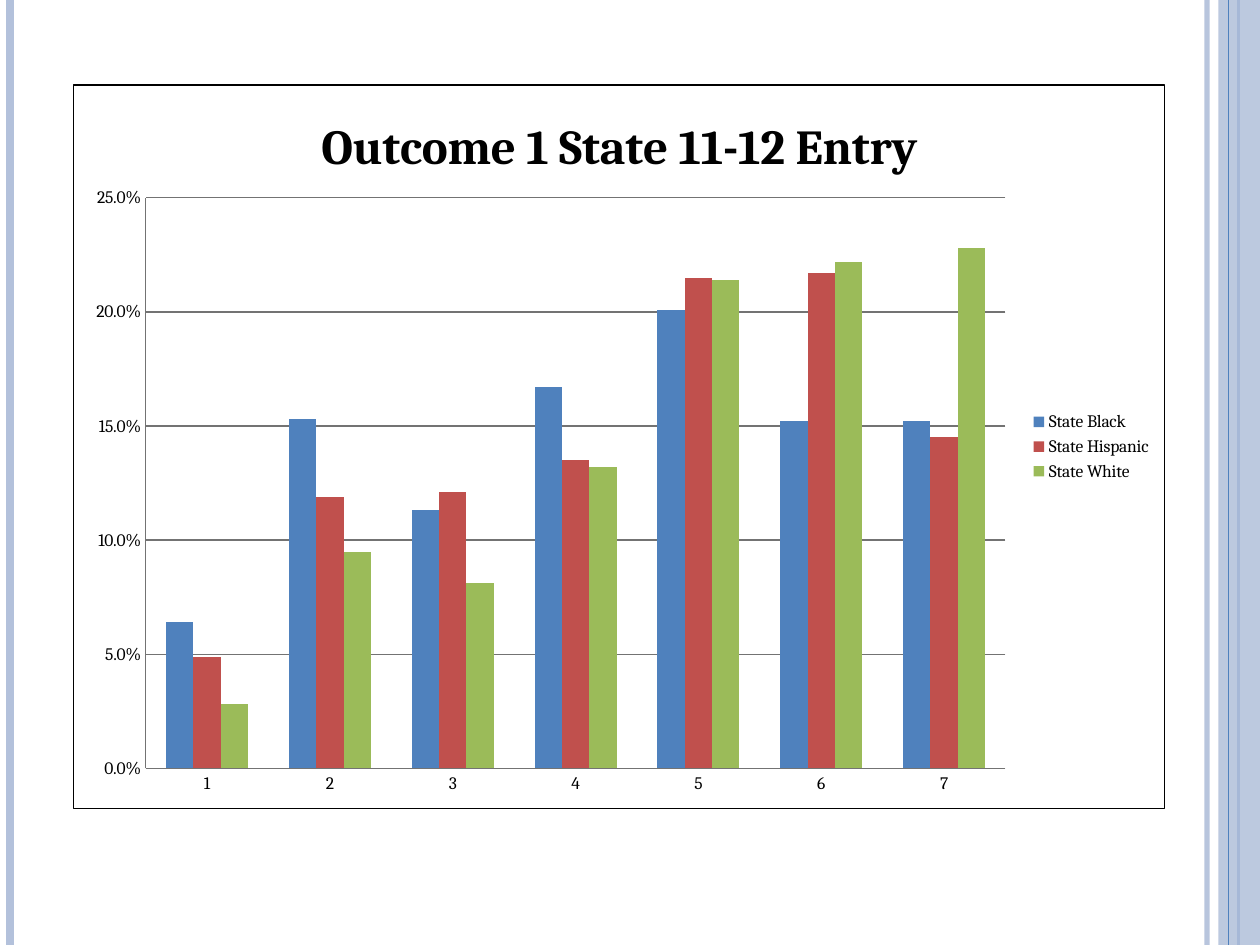
from lxml import etree
from pptx import Presentation
from pptx.chart.data import CategoryChartData
from pptx.dml.color import RGBColor
from pptx.enum.chart import XL_CHART_TYPE as ChartType
from pptx.enum.chart import XL_LEGEND_POSITION as LegendPosition
from pptx.enum.chart import XL_TICK_MARK as TickMark
from pptx.enum.shapes import MSO_CONNECTOR as Connector
from pptx.enum.shapes import MSO_SHAPE as Shape
from pptx.oxml import parse_xml
from pptx.oxml.ns import nsdecls, qn
from pptx.util import Inches, Pt

COLORS = {"pale": "B3C1DB", "blue": "4F81BD", "red": "C0504D",
          "green": "9BBB59", "grid": "737373", "black": "000000"}
FONT = "Cambria"


def rgb(name):
    return RGBColor.from_string(COLORS[name])


def add_stripe(x, color, width, opacity=100):
    """Draw a full-height vertical line at x inches; opacity is in percent."""
    stripe = slide.shapes.add_connector(
        Connector.STRAIGHT, Inches(x), 0, Inches(x), presentation.slide_height)
    stripe.line.color.rgb = rgb(color)
    stripe.line.width = Pt(width)
    properties = stripe._element.spPr
    if opacity < 100:
        line_color = next(properties.iter(qn("a:srgbClr")))
        etree.SubElement(line_color, qn("a:alpha")).set("val", str(opacity * 1000))
    etree.SubElement(properties, qn("a:effectLst"))


presentation = Presentation()
presentation.slide_width, presentation.slide_height = Inches(10), Inches(7.5)
slide = presentation.slides.add_slide(presentation.slide_layouts[6])

# Side stripes and the translucent right band
for stripe in [(9.58, "pale", 3, 93), (0.08, "pale", 4.5), (9.83, "blue", 1.5)]:
    add_stripe(*stripe)
band = slide.shapes.add_shape(
    Shape.RECTANGLE, Inches(9.67), 0, Inches(0.33), presentation.slide_height)
band.shadow.inherit = False
band.fill.solid()
band.fill.fore_color.rgb = rgb("pale")
band.line.fill.background()
band_color = next(band._element.spPr.iter(qn("a:srgbClr")))
etree.SubElement(band_color, qn("a:alpha")).set("val", "87000")
add_stripe(9.75, "blue", 0.75)

# Outcome chart
series_rows = [
    ("State Black", "blue", (0.064, 0.153, 0.113, 0.167, 0.201, 0.152, 0.152)),
    ("State Hispanic", "red", (0.049, 0.119, 0.121, 0.135, 0.215, 0.217, 0.145)),
    ("State White", "green", (0.028, 0.095, 0.081, 0.132, 0.214, 0.222, 0.228)),
]
chart_data = CategoryChartData(number_format="0.0%")
chart_data.categories = [str(number) for number in range(1, 8)]
for name, _, values in series_rows:
    chart_data.add_series(name, values)
chart = slide.shapes.add_chart(
    ChartType.COLUMN_CLUSTERED, Inches(0.58), Inches(0.67),
    Inches(8.67), Inches(5.75), chart_data).chart
chart.font.name = FONT
chart.font.size = Pt(10)
chart.font.color.rgb = rgb("black")

chart.has_title = True
title_frame = chart.chart_title.text_frame
title_frame.text = "Outcome 1 State 11-12 Entry"
title_font = title_frame.paragraphs[0].runs[0].font
title_font.name = FONT
title_font.size = Pt(28)
title_font.bold = True
title_font.color.rgb = rgb("black")

chart.has_legend = True
chart.legend.position = LegendPosition.RIGHT
chart.legend.include_in_layout = False

plot = chart.plots[0]
plot.gap_width = 150
plot.overlap = 0
plot.vary_by_categories = False
for series, (_, color, _) in zip(plot.series, series_rows):
    series.format.fill.solid()
    series.format.fill.fore_color.rgb = rgb(color)

value_axis = chart.value_axis
value_axis.minimum_scale, value_axis.maximum_scale = 0, 0.25
value_axis.major_unit = 0.05
value_axis.has_major_gridlines = True
value_axis.tick_labels.number_format = "0.0%"
value_axis.tick_labels.number_format_is_linked = False
for axis in (chart.category_axis, value_axis):
    axis.major_tick_mark = axis.minor_tick_mark = TickMark.NONE
for lines in (chart.category_axis, value_axis, value_axis.major_gridlines):
    lines.format.line.color.rgb = rgb("grid")
    lines.format.line.width = Pt(0.75)

# Inner plot area as shares of the chart
plot_area = chart._chartSpace.chart.plotArea
for old_layout in plot_area.findall(qn("c:layout")):
    plot_area.remove(old_layout)
shares = "".join(f'<c:{key} val="{share}"/>' for key, share in
                 [("x", 0.066), ("y", 0.156), ("w", 0.788), ("h", 0.789)])
plot_area.insert(0, parse_xml(
    f'<c:layout {nsdecls("c")}><c:manualLayout><c:layoutTarget val="inner"/>'
    '<c:xMode val="edge"/><c:yMode val="edge"/>'
    f'{shares}</c:manualLayout></c:layout>'))

# Chart frame
chart._chartSpace.chart.addnext(parse_xml(
    f'<c:spPr {nsdecls("c", "a")}><a:noFill/><a:ln w="{Pt(0.75)}"><a:solidFill>'
    f'<a:srgbClr val="{COLORS["black"]}"/></a:solidFill></a:ln></c:spPr>'))

presentation.save("out.pptx")
